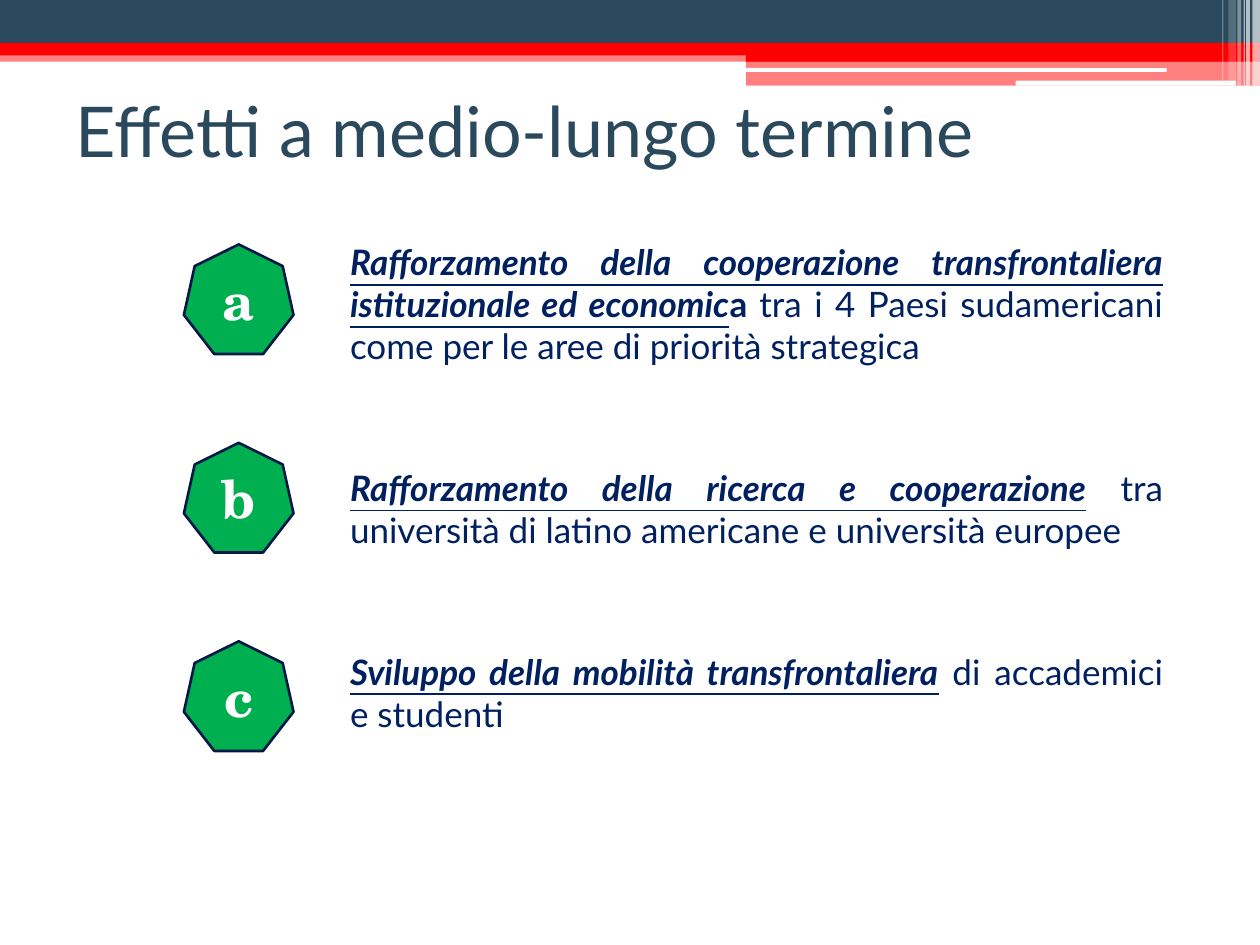
from lxml import etree
from pptx import Presentation
from pptx import util as u
from pptx.dml.color import RGBColor
from pptx.enum import shapes, text
from pptx.oxml.ns import qn

COLUMNS, ROWS = 100, 75
WIDTH, HEIGHT = u.Inches(10), u.Inches(7.5)
COLORS = {"slate": "2A495D", "red": "FF0000", "white": "FFFFFF",
          "navy": "002060", "green": "00B050", "outline": "001847"}
BODY_FONT, BADGE_FONT = "Lato", "TeX Gyre Schola"
RECT = shapes.MSO_SHAPE.RECTANGLE
ROUNDED = shapes.MSO_SHAPE.ROUNDED_RECTANGLE

# column, row, columns wide, rows high, colour, opacity in percent
BANDS = [
    (0, 4, 100, 0.9, "red", 50),
    (0, 0, 100, 3.4, "slate", 100),
    (0, 3.4, 100, 1, "red", 100),
    (59.2, 3.9, 40.8, 1, "red", 100),
    (59.2, 4.8, 40.8, 2, "red", 50),
]
SLITS = [(59.1, 5.4, 33.5, 0.3), (80.6, 6.4, 17.5, 0.4)]
# column, columns wide, rows high, opacity in percent
STRIPES = [(99.4, 0.6, 6.8, 65), (98.9, 0.3, 6.8, 65), (98.7, 0.1, 6.8, 60),
           (98.2, 0.3, 6.8, 40), (97.5, 0.6, 6.4, 20), (97, 0.1, 6.4, 30)]

# letter, underlined part, bold part, plain part
EFFECTS = [
    ("a", "Rafforzamento della cooperazione transfrontaliera "
          "istituzionale ed economic", "a ",
     "tra i 4 Paesi sudamericani come per le aree di priorità strategica"),
    ("b", "Rafforzamento della ricerca e cooperazione", " ",
     "tra università di latino americane e università europee"),
    ("c", "Sviluppo della mobilità transfrontaliera", "",
     " di accademici e studenti"),
]
BADGE_TOP, BADGE_STEP = 19.4, 15.75


def color(name):
    return RGBColor.from_string(COLORS[name])


def place(column, row, columns, rows):
    """Turn grid units into left, top, width and height."""
    return (round(WIDTH * column / COLUMNS), round(HEIGHT * row / ROWS),
            round(WIDTH * columns / COLUMNS), round(HEIGHT * rows / ROWS))


def add_block(page, kind, area, fill, opacity=100):
    block = page.shapes.add_shape(kind, *place(*area))
    block.shadow.inherit = False
    block.fill.solid()
    block.fill.fore_color.rgb = color(fill)
    block.line.fill.background()
    if opacity < 100:
        tint = block.fill._xPr.find(".//" + qn("a:srgbClr"))
        etree.SubElement(tint, qn("a:alpha"), val=str(opacity * 1000))
    return block


def add_span(para, words, font, size, fill, bold=False, marked=False):
    """Add one run; a marked run is italic and underlined."""
    span = para.add_run()
    span.text = words
    span.font.name, span.font.size = font, u.Pt(size)
    span.font.color.rgb = color(fill)
    span.font.bold, span.font.italic, span.font.underline = bold, marked, marked


def add_header(page):
    for *area, fill, opacity in BANDS:
        add_block(page, RECT, area, fill, opacity)
    for area in SLITS:
        add_block(page, ROUNDED, area, "white")
    for column, columns, rows, opacity in STRIPES:
        add_block(page, RECT, (column, 0, columns, rows), "white", opacity)


def add_text_box(page, area):
    box = page.shapes.add_textbox(*place(*area))
    box.text_frame.word_wrap = True
    return box.text_frame


def add_title(page, words):
    frame = add_text_box(page, (5, 4.4, 90, 11.7))
    frame.vertical_anchor = text.MSO_ANCHOR.MIDDLE
    add_span(frame.paragraphs[0], words, BODY_FONT, 40, "slate")


def add_effects(page):
    frame = add_text_box(page, (25.6, 18.6, 67.7, 40.9))
    for index, (_, marked, bold, plain) in enumerate(EFFECTS):
        para = frame.add_paragraph() if index else frame.paragraphs[0]
        para.alignment = text.PP_ALIGN.JUSTIFY
        para._p.get_or_add_pPr().set("marL", str(u.Inches(0.12)))
        if index:
            para.space_before = u.Pt(57)
        add_span(para, marked, BODY_FONT, 20, "navy", bold=True, marked=True)
        if bold:
            add_span(para, bold, BODY_FONT, 20, "navy", bold=True)
        add_span(para, plain, BODY_FONT, 20, "navy")


def add_badge(page, letter, row):
    badge = add_block(page, shapes.MSO_SHAPE.HEPTAGON,
                      (14.6, row, 8.7, 8.7), "green")
    badge.line.color.rgb = color("outline")
    badge.line.width = u.Pt(1.5)
    badge.text_frame.vertical_anchor = text.MSO_ANCHOR.MIDDLE
    para = badge.text_frame.paragraphs[0]
    para.alignment = text.PP_ALIGN.CENTER
    add_span(para, letter, BADGE_FONT, 30, "white", bold=True)


def main():
    deck = Presentation()
    deck.slide_width, deck.slide_height = WIDTH, HEIGHT
    page = deck.slides.add_slide(deck.slide_layouts[6])
    add_header(page)
    add_effects(page)
    add_title(page, "Effetti a medio-lungo termine")
    for index, (letter, *_) in enumerate(EFFECTS):
        add_badge(page, letter, BADGE_TOP + index * BADGE_STEP)
    deck.save("out.pptx")


if __name__ == "__main__":
    main()
